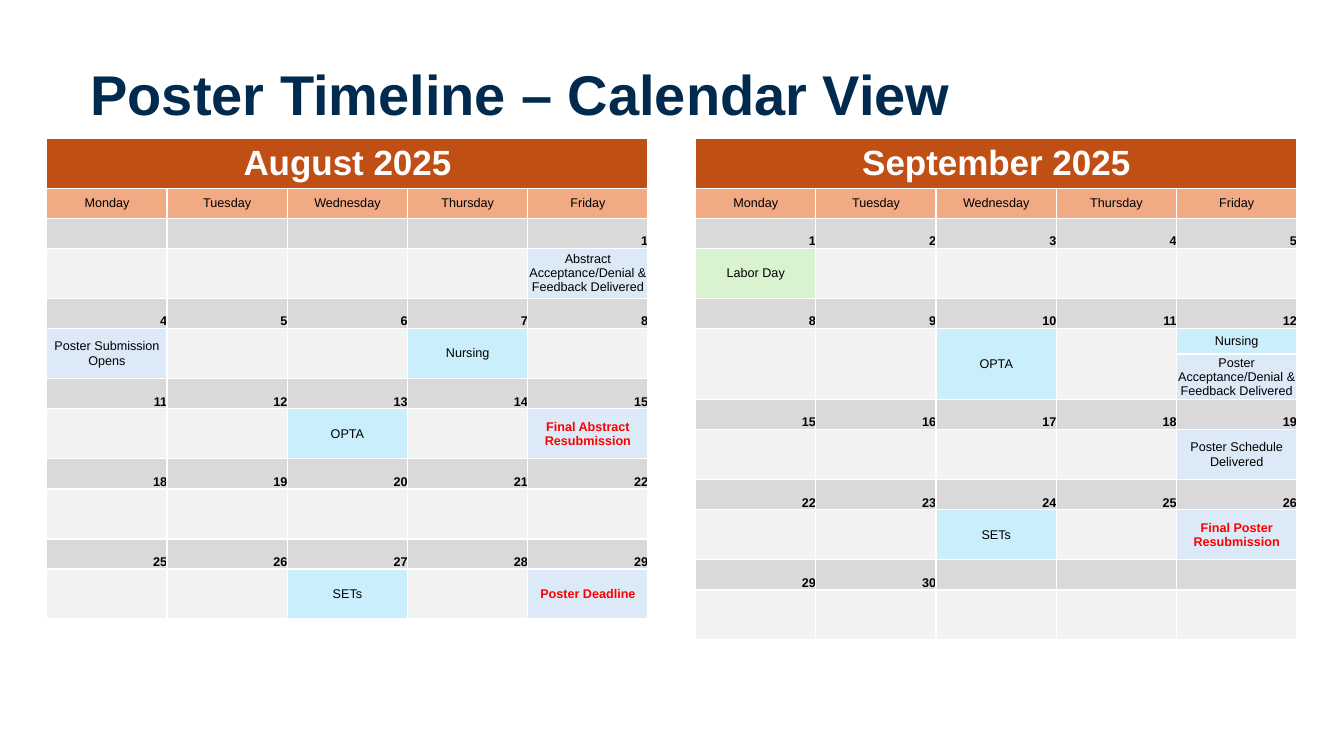
import pptx
import pptx.util
import pptx.dml.color
import pptx.enum.text
import pptx.oxml
import pptx.oxml.ns
from lxml import etree

Cm = pptx.util.Cm
Pt = pptx.util.Pt
RGB = pptx.dml.color.RGBColor
Align = pptx.enum.text.PP_ALIGN
Anchor = pptx.enum.text.MSO_ANCHOR

NAVY = RGB(0x00, 0x2B, 0x4E)
RUST = RGB(0xC0, 0x4F, 0x15)
PEACH = RGB(0xF2, 0xAA, 0x84)
GREY = RGB(0xD9, 0xD9, 0xD9)
PALE = RGB(0xF2, 0xF2, 0xF2)
GREEN = RGB(0xD9, 0xF2, 0xD0)
CYAN = RGB(0xCA, 0xEE, 0xFB)
BLUE = RGB(0xDC, 0xEA, 0xF7)
RED = RGB(0xFF, 0x00, 0x00)
BLACK = RGB(0x00, 0x00, 0x00)
WHITE = RGB(0xFF, 0xFF, 0xFF)

TITLE = {"size": Pt(40), "bold": True, "color": NAVY}
MONTH = {"size": Pt(25), "bold": True, "color": WHITE}
PLAIN = {"size": Pt(9), "bold": False, "color": BLACK}
DATE = {"size": Pt(9), "bold": True, "color": BLACK}
ALERT = {"size": Pt(9), "bold": True, "color": RED}

DAYS = ["Monday", "Tuesday", "Wednesday", "Thursday", "Friday"]
WIDTH = Cm(3.03)
TALL = Cm(1.26)
SHORT = Cm(0.76)
SPLIT = [Cm(0.64), Cm(1.08)]

AUGUST = {
    1: [("Abstract Acceptance/Denial & Feedback Delivered", BLUE, PLAIN)],
    4: [("Poster Submission Opens", BLUE, PLAIN)],
    7: [("Nursing", CYAN, PLAIN)],
    13: [("OPTA", CYAN, PLAIN)],
    15: [("Final Abstract Resubmission", BLUE, ALERT)],
    27: [("SETs", CYAN, PLAIN)],
    29: [("Poster Deadline", BLUE, ALERT)],
}
SEPTEMBER = {
    1: [("Labor Day", GREEN, PLAIN)],
    10: [("OPTA", CYAN, PLAIN)],
    12: [("Nursing", CYAN, PLAIN),
         ("Poster Acceptance/Denial & Feedback Delivered", BLUE, PLAIN)],
    19: [("Poster Schedule Delivered", BLUE, PLAIN)],
    24: [("SETs", CYAN, PLAIN)],
    26: [("Final Poster Resubmission", BLUE, ALERT)],
}


def write(para, text, style):
    run = para.add_run()
    run.text = text
    run.font.name = "Arial"
    for key, value in style.items():
        if key == "color":
            run.font.color.rgb = value
        else:
            setattr(run.font, key, value)


def edge(cell):
    qn = pptx.oxml.ns.qn
    props = cell._tc.get_or_add_tcPr()
    for side in "LRTB":
        line = etree.SubElement(props, qn("a:ln" + side), w=str(Pt(1)))
        fill = etree.SubElement(line, qn("a:solidFill"))
        etree.SubElement(fill, qn("a:srgbClr"), val=str(WHITE))


def paint(cell, fill, text="", style=PLAIN, align=Align.CENTER, anchor=Anchor.MIDDLE):
    cell.fill.solid()
    cell.fill.fore_color.rgb = fill
    cell.vertical_anchor = anchor
    para = cell.text_frame.paragraphs[0]
    para.alignment = align
    if text:
        write(para, text, style)
    else:
        para._p.get_or_add_endParaRPr().set("sz", "900")


def add_week(table, row, first, last, events):
    dates = range(first, first + len(DAYS))
    depth = max(len(events.get(day, [])) for day in dates) or 1
    for col, day in enumerate(dates):
        text = str(day) if 1 <= day <= last else ""
        paint(table.cell(row, col), GREY, text, DATE, Align.RIGHT, Anchor.BOTTOM)
        items = events.get(day, [("", PALE, PLAIN)])
        for step in range(depth):
            item = items[step] if step < len(items) else ("", PALE, PLAIN)
            text, fill, style = item
            paint(table.cell(row + 1 + step, col), fill, text, style)
        if len(items) < depth:
            table.cell(row + 1, col).merge(table.cell(row + depth, col))
    return [SHORT] + (SPLIT if depth == 2 else [TALL])


def add_month(slide, left, name, first, last, events):
    weeks = range(first, last + 1, 7)
    extra = sum(len(items) - 1 for items in events.values())
    count = 2 + 2 * len(weeks) + extra
    frame = slide.shapes.add_table(
        count, len(DAYS), left, Cm(3.48), WIDTH * len(DAYS), SHORT * count)
    table = frame.table
    table.first_row = False
    table.horz_banding = False
    for cell in table.iter_cells():
        for side in ("left", "right", "top", "bottom"):
            setattr(cell, "margin_" + side, 0)
        edge(cell)
    for col, day in enumerate(DAYS):
        table.columns[col].width = WIDTH
        paint(table.cell(0, col), RUST, "" if col else name, MONTH)
        paint(table.cell(1, col), PEACH, day)
    table.cell(0, 0).merge(table.cell(0, len(DAYS) - 1))
    sizes = [TALL, SHORT]
    for start in weeks:
        sizes += add_week(table, len(sizes), start, last, events)
    for row, size in zip(table.rows, sizes):
        row.height = size


def add_title(slide, text):
    box = slide.shapes.add_textbox(Cm(2.03), Cm(1.5), Cm(29.8), Cm(1.93))
    frame = box.text_frame
    frame.word_wrap = True
    frame.vertical_anchor = Anchor.MIDDLE
    para = frame.paragraphs[0]
    para.line_spacing = 0.9
    write(para, text, TITLE)


def main():
    deck = pptx.Presentation()
    deck.slide_width = Cm(33.87)
    deck.slide_height = Cm(19.05)
    slide = deck.slides.add_slide(deck.slide_layouts[6])
    add_title(slide, "Poster Timeline – Calendar View")
    add_month(slide, Cm(17.53), "September 2025", 1, 30, SEPTEMBER)
    add_month(slide, Cm(1.18), "August 2025", -3, 31, AUGUST)
    deck.save("out.pptx")


if __name__ == "__main__":
    main()
